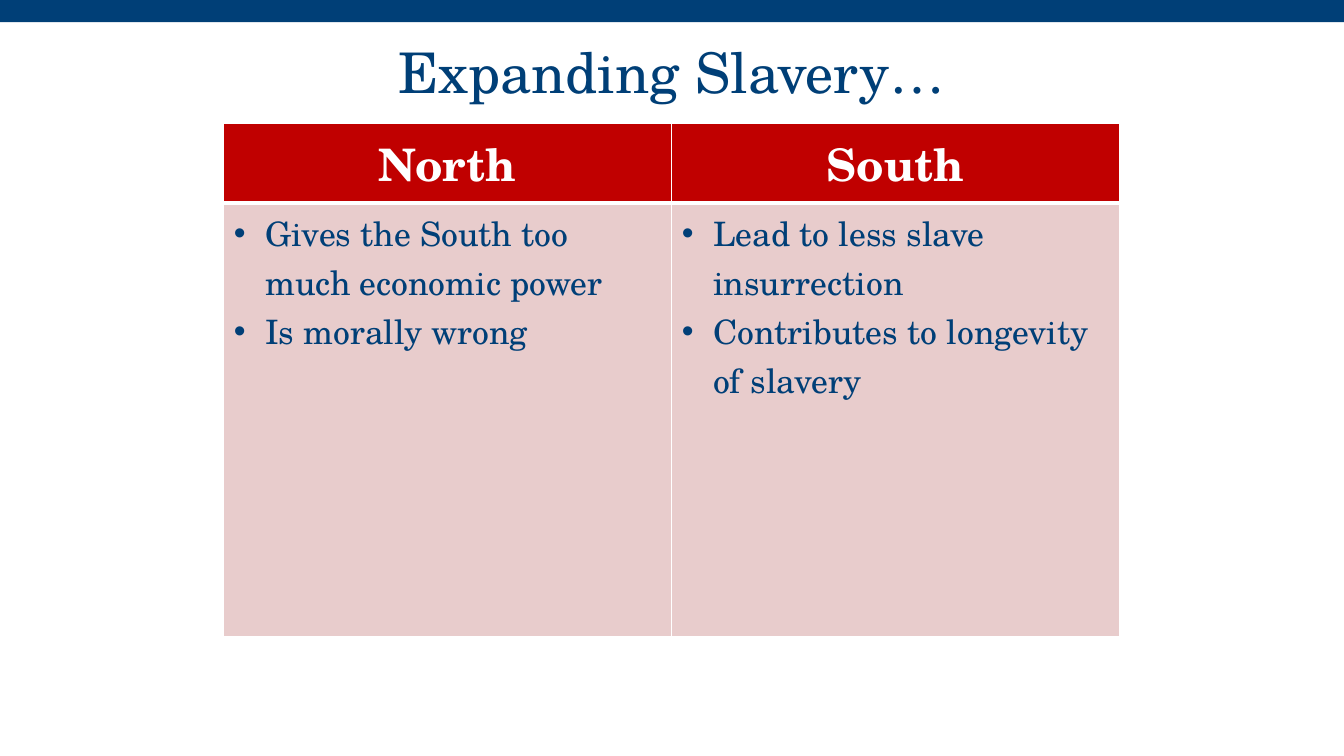
from dataclasses import dataclass

import pptx
import pptx.dml.color
import pptx.enum.shapes
import pptx.enum.text
import pptx.oxml
import pptx.oxml.ns
import pptx.util
from pptx.util import Cm, Pt

ALIGN = pptx.enum.text.PP_ALIGN
ANCHOR = pptx.enum.text.MSO_ANCHOR


@dataclass(frozen=True)
class Theme:
    font: str = "TeX Gyre Schola"
    navy: str = "003F77"
    red: str = "C00000"
    pink: str = "E8CCCC"
    white: str = "FFFFFF"
    title_size: int = 40
    header_size: int = 32
    body_size: int = 24
    thin_rule: int = 1
    thick_rule: int = 3


THEME = Theme()

VIEWS = {
    "North": ["Gives the South too much economic power", "Is morally wrong"],
    "South": ["Lead to less slave insurrection", "Contributes to longevity of slavery"],
}


def rgb(value):
    return pptx.dml.color.RGBColor.from_string(value)


def add_run(paragraph, words, size, color, bold=False):
    run = paragraph.add_run()
    run.text = words
    run.font.name = THEME.font
    run.font.size = Pt(size)
    run.font.bold = bold
    run.font.color.rgb = rgb(color)


def add_bullet(paragraph, indent):
    properties = paragraph._p.get_or_add_pPr()
    properties.set("marL", str(indent))
    properties.set("indent", str(-indent))
    for tag, name, value in (("buFont", "typeface", "Arial"), ("buChar", "char", "•")):
        element = pptx.oxml.parse_xml(f'<a:{tag} {pptx.oxml.ns.nsdecls("a")} {name}="{value}"/>')
        properties.append(element)


def style_cell(cell, fill, top_rule, bottom_rule):
    """Draw the white rules of a cell, then its fill, in the order the XML requires."""
    properties = cell._tc.get_or_add_tcPr()
    rules = {"L": THEME.thin_rule, "R": THEME.thin_rule, "T": top_rule, "B": bottom_rule}
    for side, width in rules.items():
        properties.append(pptx.oxml.parse_xml(
            f'<a:ln{side} {pptx.oxml.ns.nsdecls("a")} w="{Pt(width)}">'
            f'<a:solidFill><a:srgbClr val="{THEME.white}"/></a:solidFill></a:ln{side}>'))
    cell.fill.solid()
    cell.fill.fore_color.rgb = rgb(fill)


def add_top_band(slide, left, top, width, height):
    band = slide.shapes.add_shape(
        pptx.enum.shapes.MSO_SHAPE.RECTANGLE, left, top, width, height)
    band.shadow.inherit = False
    band.fill.solid()
    band.fill.fore_color.rgb = rgb(THEME.navy)
    band.line.fill.background()


def place_title(slide, words, left, top, width, height):
    title = slide.shapes.title
    title.left, title.top, title.width, title.height = left, top, width, height
    frame = title.text_frame
    frame.word_wrap = True
    frame.vertical_anchor = ANCHOR.MIDDLE
    heading = frame.paragraphs[0]
    heading.alignment = ALIGN.CENTER
    heading.line_spacing = 0.9
    add_run(heading, words, THEME.title_size, THEME.navy)


def add_views_table(slide, views, left, top, width, height):
    """Place one column per region: its name above its bulleted arguments."""
    table = slide.shapes.add_table(2, len(views), left, top, width, height).table
    table.horz_banding = False
    header_height = Cm(1.7)
    table.rows[0].height = header_height
    table.rows[1].height = height - header_height
    for index, (region, arguments) in enumerate(views.items()):
        table.columns[index].width = width // len(views)
        header, body = table.cell(0, index), table.cell(1, index)
        style_cell(header, THEME.red, THEME.thin_rule, THEME.thick_rule)
        style_cell(body, THEME.pink, THEME.thick_rule, THEME.thin_rule)

        region_name = header.text_frame.paragraphs[0]
        region_name.alignment = ALIGN.CENTER
        add_run(region_name, region, THEME.header_size, THEME.white, bold=True)

        frame = body.text_frame
        for number, argument in enumerate(arguments):
            point = frame.add_paragraph() if number else frame.paragraphs[0]
            add_bullet(point, Cm(0.79))
            add_run(point, argument, THEME.body_size, THEME.navy)


def build_comparison_slide(deck):
    slide = deck.slides.add_slide(deck.slide_layouts[5])
    add_top_band(slide, 0, 0, deck.slide_width, Cm(0.56))
    place_title(slide, "Expanding Slavery…", Cm(2.33), Cm(0.66), Cm(29.21), Cm(2.46))
    add_views_table(slide, VIEWS, Cm(5.64), Cm(3.12), Cm(22.58), Cm(12.62))


def main():
    deck = pptx.Presentation()
    deck.slide_width, deck.slide_height = Cm(33.87), Cm(19.05)
    build_comparison_slide(deck)
    deck.save("out.pptx")


if __name__ == "__main__":
    main()
